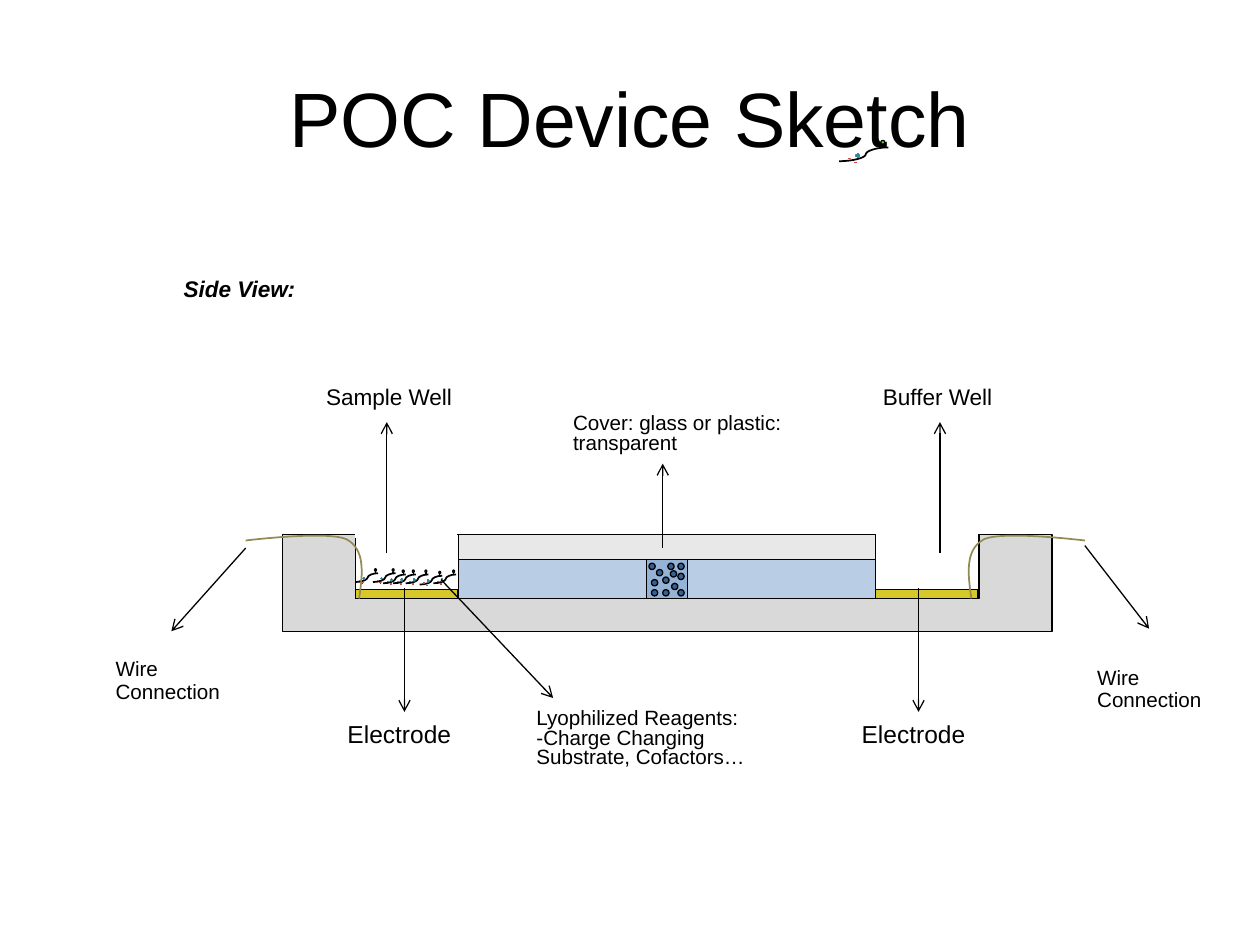
"""Build the POC device side-view slide."""
from dataclasses import dataclass

from pptx import Presentation, util as u
from pptx.dml.color import RGBColor
from pptx.enum import shapes, text
from pptx.oxml import parse_xml
from pptx.oxml.ns import nsdecls, qn

SHAPE = shapes.MSO_SHAPE


@dataclass(frozen=True)
class Theme:
    font: str = "Arial"
    ink: str = "000000"
    paper: str = "FFFFFF"
    base: str = "D9D9D9"
    channel: str = "B9CDE5"
    gel: str = "95B3D7"
    cover: str = "E8E8E8"
    bead: str = "376092"
    electrode: str = "D5C828"
    wire: str = "948A54"
    plus: str = "31859C"
    minus: str = "FF0000"
    minus_edge: str = "C0504D"
    tip: str = "71C931"
    title_size: float = 44
    electrode_size: float = 14
    label_size: float = 12.9
    note_size: float = 11.8


class Sketch:
    def __init__(self, prs, theme):
        self.theme = theme
        self.slide = prs.slides.add_slide(prs.slide_layouts[5])

    def style_line(self, sp, color, width):
        sp.line.color.rgb = RGBColor.from_string(color)
        sp.line.width = u.Pt(width)

    def style_runs(self, tf, size, spacing=None, strong=False):
        for p in tf.paragraphs:
            p.line_spacing = spacing
            for r in p.runs:
                r.font.name = self.theme.font
                r.font.size = u.Pt(size)
                r.font.color.rgb = RGBColor.from_string(self.theme.ink)
                if strong:
                    r.font.bold = r.font.italic = True

    def title(self, words, x, y, w, h):
        sp = self.slide.shapes.title
        sp.left, sp.top, sp.width, sp.height = map(u.Inches, (x, y, w, h))
        tf = sp.text_frame
        tf.text = words
        tf.vertical_anchor = text.MSO_ANCHOR.MIDDLE
        tf.paragraphs[0].alignment = text.PP_ALIGN.CENTER
        self.style_runs(tf, self.theme.title_size)

    def label(self, words, x, y, w, h, size, spacing=1.0, strong=False):
        sp = self.slide.shapes.add_textbox(*map(u.Inches, (x, y, w, h)))
        tf = sp.text_frame
        tf.word_wrap = True
        tf.margin_top = u.Inches(0.05) + u.Pt(1.15 * size * spacing)
        tf.text = words
        self.style_runs(tf, size, spacing, strong)

    def shape(self, kind, x, y, w, h, fill, edge=None, width=0.75):
        sp = self.slide.shapes.add_shape(kind, *map(u.Inches, (x, y, w, h)))
        sp.shadow.inherit = False
        sp.fill.solid()
        sp.fill.fore_color.rgb = RGBColor.from_string(fill)
        self.style_line(sp, edge or self.theme.ink, width)

    def line(self, x1, y1, x2, y2, color=None, width=0.75,
             kind=shapes.MSO_CONNECTOR.STRAIGHT):
        sp = self.slide.shapes.add_connector(kind, *map(u.Inches, (x1, y1, x2, y2)))
        self.style_line(sp, color or self.theme.ink, width)
        sp._element.spPr.append(parse_xml(f"<a:effectLst {nsdecls('a')}/>"))
        return sp

    def arrow(self, x1, y1, x2, y2):
        ln = self.line(x1, y1, x2, y2).line._get_or_add_ln()
        ln.append(parse_xml(f'<a:tailEnd {nsdecls("a")} type="arrow"/>'))

    def curve(self, x1, y1, x2, y2):
        sp = self.line(x1, y1, x2, y2, width=1, kind=shapes.MSO_CONNECTOR.CURVE)
        geom = sp._element.spPr.find(qn("a:prstGeom"))
        geom.get_or_add_avLst().append(
            parse_xml(f'<a:gd {nsdecls("a")} name="adj1" fmla="val 54100"/>'))

    def wire(self, beziers, steps=16):
        points = []
        for a, b, c, d in beziers:
            for i in range(steps + 1):
                t = i / steps
                points.append(tuple(
                    u.Inches((1 - t) ** 3 * a[k] + 3 * (1 - t) ** 2 * t * b[k]
                             + 3 * (1 - t) * t ** 2 * c[k] + t ** 3 * d[k])
                    for k in (0, 1)))
        builder = self.slide.shapes.build_freeform(*points[0])
        builder.add_line_segments(points[1:], close=False)
        sp = builder.convert_to_shape()
        sp.shadow.inherit = False
        sp.fill.background()
        self.style_line(sp, self.theme.wire, 1)

    def reagent(self, x, y, w=0.18, h=0.07):
        th = self.theme
        self.curve(x, y + h, x + w, y)
        for kind, dx, dy, dw, dh, fill, edge, width in (
                (SHAPE.MATH_PLUS, 0.33, 0.4, 0.1, 0.4, th.plus, th.plus, 0.75),
                (SHAPE.MATH_MINUS, 0.17, 0.72, 0.07, 0.16, th.minus, th.minus_edge, 0.5),
                (SHAPE.MATH_MINUS, 0.3, 1, 0.07, 0.16, th.minus, th.minus_edge, 0.5),
                (SHAPE.OVAL, 0.85, -0.5, 0.08, 0.27, th.tip, th.ink, 0.75)):
            self.shape(kind, x + dx * w, y + dy * h, dw * w, dh * h, fill, edge, width)
        self.line(x + 0.89 * w, y - 0.2 * h, x + 0.89 * w, y)


def draw_device(s):
    th = s.theme
    wells = (2.82, 6.95)
    s.shape(SHAPE.RECTANGLE, 2.24, 4.24, 6.11, 0.77, th.base)
    s.shape(SHAPE.RECTANGLE, 3.64, 4.44, 3.31, 0.31, th.channel)
    s.shape(SHAPE.RECTANGLE, 5.13, 4.44, 0.33, 0.31, th.gel)
    for x in wells:
        s.shape(SHAPE.RECTANGLE, x, 4.24, 0.82, 0.51, th.paper)
    s.shape(SHAPE.RECTANGLE, 3.64, 4.24, 3.31, 0.2, th.cover)
    for x, width in zip(wells, (4.5, 3)):
        s.line(x, 4.24, x + 0.81, 4.24, th.paper, width)
    for x, y in ((5.15, 4.47), (5.38, 4.47), (5.17, 4.68), (5.38, 4.68),
                 (5.33, 4.63), (5.3, 4.47), (5.17, 4.6), (5.26, 4.68),
                 (5.38, 4.55), (5.26, 4.58), (5.21, 4.52), (5.32, 4.53)):
        s.shape(SHAPE.OVAL, x, y, 0.05, 0.05, th.bead)
    for x in wells:
        s.shape(SHAPE.RECTANGLE, x, 4.68, 0.81, 0.07, th.electrode)
    for x, y in ((2.82, 4.55), (2.96, 4.55), (3.12, 4.56), (3.22, 4.56),
                 (3.33, 4.57), (3.44, 4.56), (3.04, 4.56)):
        s.reagent(x, y)
    left = (((2.85, 4.75), (2.88, 4.55), (2.9, 4.36), (2.75, 4.28)),
            ((2.75, 4.28), (2.6, 4.21), (1.95, 4.29), (1.95, 4.29)))
    s.wire(left)
    s.wire([[(10.56 - x, y) for x, y in bezier] for bezier in left])


def draw_labels(s):
    th = s.theme
    for x in (3.21, 7.29):
        s.arrow(x, 4.67, x, 5.65)
        s.label("Electrode", x - 0.55, 5.43, 1.1, 0.69, th.electrode_size)
    for words, x, left, w in (("Buffer Well", 7.46, 6.91, 1.1),
                              ("Sample Well", 3.07, 2.49, 1.44)):
        s.arrow(x, 4.39, x, 3.35)
        s.label(words, left, 2.83, w, 0.51, th.label_size, 0.9)
    s.label("Side View:", 1.36, 1.97, 1.44, 0.51, th.label_size, 0.9, strong=True)
    for ends, x, y in (((1.95, 4.35, 1.36, 5.01), 0.82, 5.01),
                       ((8.61, 4.33, 9.12, 4.99), 8.61, 5.08)):
        s.arrow(*ends)
        s.label("Wire Connection", x, y, 1.1, 0.69, th.note_size, 0.9)
    s.arrow(3.5, 4.6, 4.39, 5.54)
    s.label("Lyophilized Reagents:\n-Charge Changing Substrate, Cofactors…",
            4.16, 5.43, 1.93, 0.97, th.note_size, 0.8)
    s.arrow(5.26, 4.35, 5.26, 3.68)
    s.label("Cover: glass or plastic: transparent",
            4.45, 3.09, 1.97, 0.59, th.note_size, 0.8)


def main():
    prs = Presentation()
    prs.slide_width, prs.slide_height = u.Inches(10), u.Inches(7.5)
    s = Sketch(prs, Theme())
    s.title("POC Device Sketch", 0.5, 0.3, 9, 1.25)
    draw_device(s)
    draw_labels(s)
    s.reagent(6.66, 1.17, 0.39, 0.11)
    prs.save("out.pptx")


if __name__ == "__main__":
    main()
